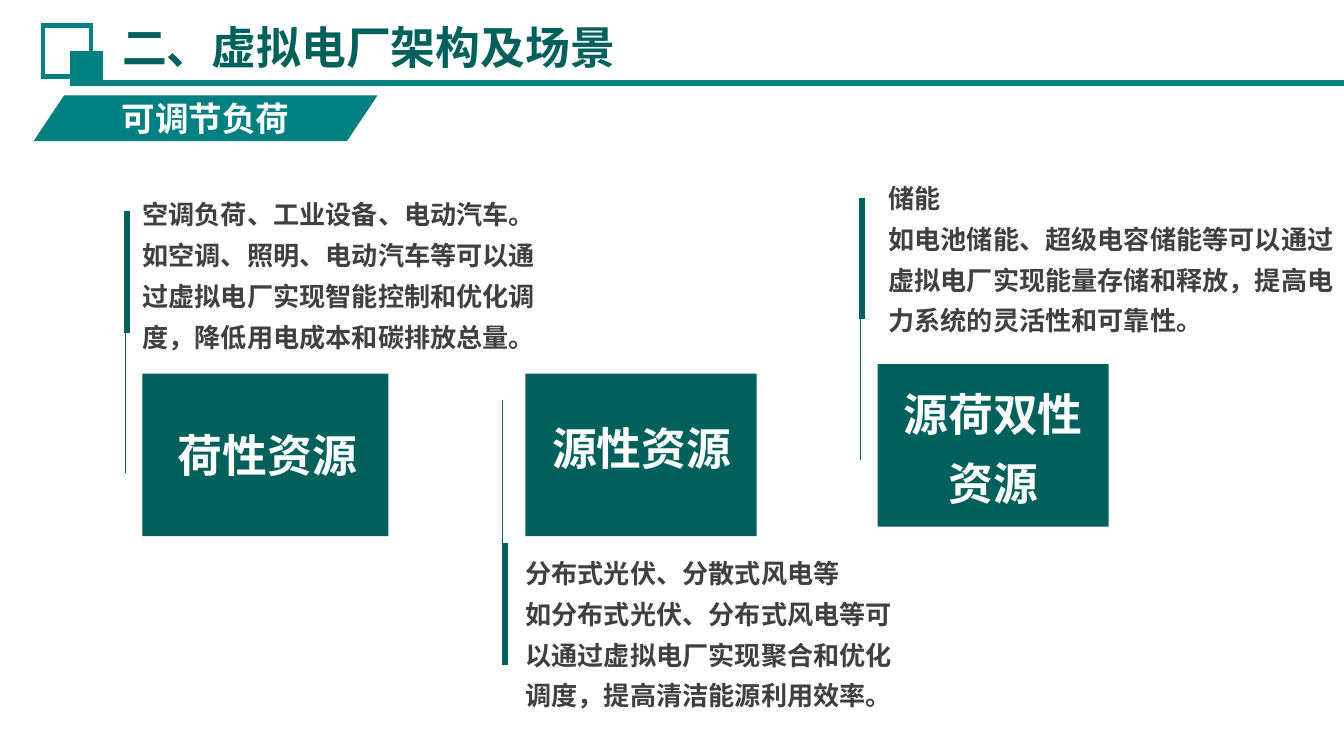
from lxml.etree import SubElement
from pptx import Presentation
from pptx.dml.color import RGBColor
from pptx.enum.shapes import MSO_CONNECTOR as Connector, MSO_SHAPE as Shape
from pptx.enum.text import MSO_ANCHOR as Anchor, PP_ALIGN as Align
from pptx.oxml.ns import qn
from pptx.util import Inches, Pt

COLORS = {"teal": "008080", "deep": "00615C", "body": "404040", "white": "FFFFFF"}
SANS, SERIF = "Noto Sans CJK SC", "Times New Roman"

TITLE = "二、虚拟电厂架构及场景"
SUBTITLE = "可调节负荷"

# Boxes are left, top, width, height; bar_offset is measured from the rule's top.
RESOURCES = [
    {"name": "荷性资源", "card": (1.06, 2.78, 1.83, 1.21),
     "label": (1.09, 2.99, 1.8, 0.71), "label_spacing": 1.2,
     "label_insets": (0.07, 0.04), "label_anchor": Anchor.MIDDLE,
     "rule": (0.93, 1.58), "bar_offset": 0,
     "details": (1.06, 1.31, 2.99, 1.41),
     "lines": ["空调负荷、工业设备、电动汽车。",
               "如空调、照明、电动汽车等可以通过虚拟电厂实现智能控制和优化调度，降低用电成本和碳排放总量。"]},
    {"name": "源性资源", "card": (3.91, 2.78, 1.72, 1.21),
     "label": (4, 3, 1.55, 1.17), "label_spacing": 1.2,
     "label_insets": (0.1, 0.05), "label_anchor": Anchor.TOP,
     "rule": (3.74, 2.98), "bar_offset": 1.07,
     "details": (3.91, 4.16, 2.77, 1.05),
     "lines": ["分布式光伏、分散式风电等",
               "如分布式光伏、分布式风电等可以通过虚拟电厂实现聚合和优化调度，提高清洁能源利用效率。"]},
    {"name": "源荷双性资源", "card": (6.53, 2.71, 1.72, 1.21),
     "label": (6.56, 3.01, 1.66, 0.53), "label_spacing": 1.3,
     "label_insets": (0.07, 0.04), "label_anchor": Anchor.MIDDLE,
     "rule": (6.4, 1.48), "bar_offset": 0,
     "details": (6.61, 1.32, 3.32, 1.15),
     "lines": ["储能",
               "如电池储能、超级电容储能等可以通过虚拟电厂实现能量存储和释放，提高电力系统的灵活性和可靠性。"]},
]
RULE_LENGTH = 1.94
BAR_WIDTH, BAR_HEIGHT = 0.03, 0.89

prs = Presentation()
prs.slide_width = Inches(10)
prs.slide_height = prs.slide_width * 9 // 16
slide = prs.slides.add_slide(prs.slide_layouts[6])


def rgb(color):
    return RGBColor.from_string(COLORS[color])


def add_block(box, fill=None, outline=None, width=1, kind=Shape.RECTANGLE):
    block = slide.shapes.add_shape(kind, *map(Inches, box))
    block.shadow.inherit = False
    if fill:
        block.fill.solid()
        block.fill.fore_color.rgb = rgb(fill)
    else:
        block.fill.background()
    if outline:
        block.line.color.rgb = rgb(outline)
        block.line.width = Pt(width)
        SubElement(block._element.spPr.find(qn("a:ln")), qn("a:miter")).set("lim", "800000")
    else:
        block.line.fill.background()
    return block


def add_rule(x1, y1, x2, y2, color, width):
    rule = slide.shapes.add_connector(Connector.STRAIGHT, *map(Inches, (x1, y1, x2, y2)))
    rule.line.color.rgb = rgb(color)
    rule.line.width = Pt(width)
    SubElement(rule._element.spPr, qn("a:effectLst"))


def write(shape, lines, size, font, color, align=Align.LEFT, spacing=1.0,
          insets=(0.1, 0.05), anchor=Anchor.MIDDLE):
    frame = shape.text_frame
    frame.word_wrap = True
    frame.vertical_anchor = anchor
    frame.margin_left = frame.margin_right = Inches(insets[0])
    frame.margin_top = frame.margin_bottom = Inches(insets[1])
    frame.text = "\n".join(lines)
    for paragraph in frame.paragraphs:
        paragraph.alignment = align
        paragraph.line_spacing = spacing
        paragraph.font.size = Pt(size)
        paragraph.font.bold = True
        paragraph.font.name = font
        paragraph.font.color.rgb = rgb(color)
        properties = paragraph._p.pPr.find(qn("a:defRPr"))
        SubElement(properties, qn("a:ea")).set("typeface", SANS)


def add_text(box, *args, **kwargs):
    write(slide.shapes.add_textbox(*map(Inches, box)), *args, **kwargs)


# Header
add_rule(0.74, 0.62, 10, 0.62, "teal", 3)
add_block((0.32, 0.19, 0.36, 0.38), outline="teal", width=2.25)
add_block((0.53, 0.39, 0.23, 0.24), "teal", "teal")
add_text((0.81, 0.1, 6.69, 0.5), [TITLE], 24, SERIF, "deep", anchor=Anchor.TOP)
banner = add_block((0.25, 0.71, 2.56, 0.34), "teal", kind=Shape.PARALLELOGRAM)
banner.adjustments[0] = 0.67
write(banner, [SUBTITLE], 18, SANS, "white", Align.CENTER, insets=(0, 0.05))

# Resource types
for resource in RESOURCES:
    x, y = resource["rule"]
    add_rule(x, y, x, y + RULE_LENGTH, "deep", 0.5)
    add_block((x, y + resource["bar_offset"], BAR_WIDTH, BAR_HEIGHT), "deep", "deep")
    add_block(resource["card"], "deep")
    add_text(resource["label"], [resource["name"]], 24, SANS, "white", Align.CENTER,
             resource["label_spacing"], resource["label_insets"], resource["label_anchor"])
    add_text(resource["details"], resource["lines"], 14, SERIF, "body",
             spacing=1.3, insets=(0, 0.08))

prs.save("out.pptx")
